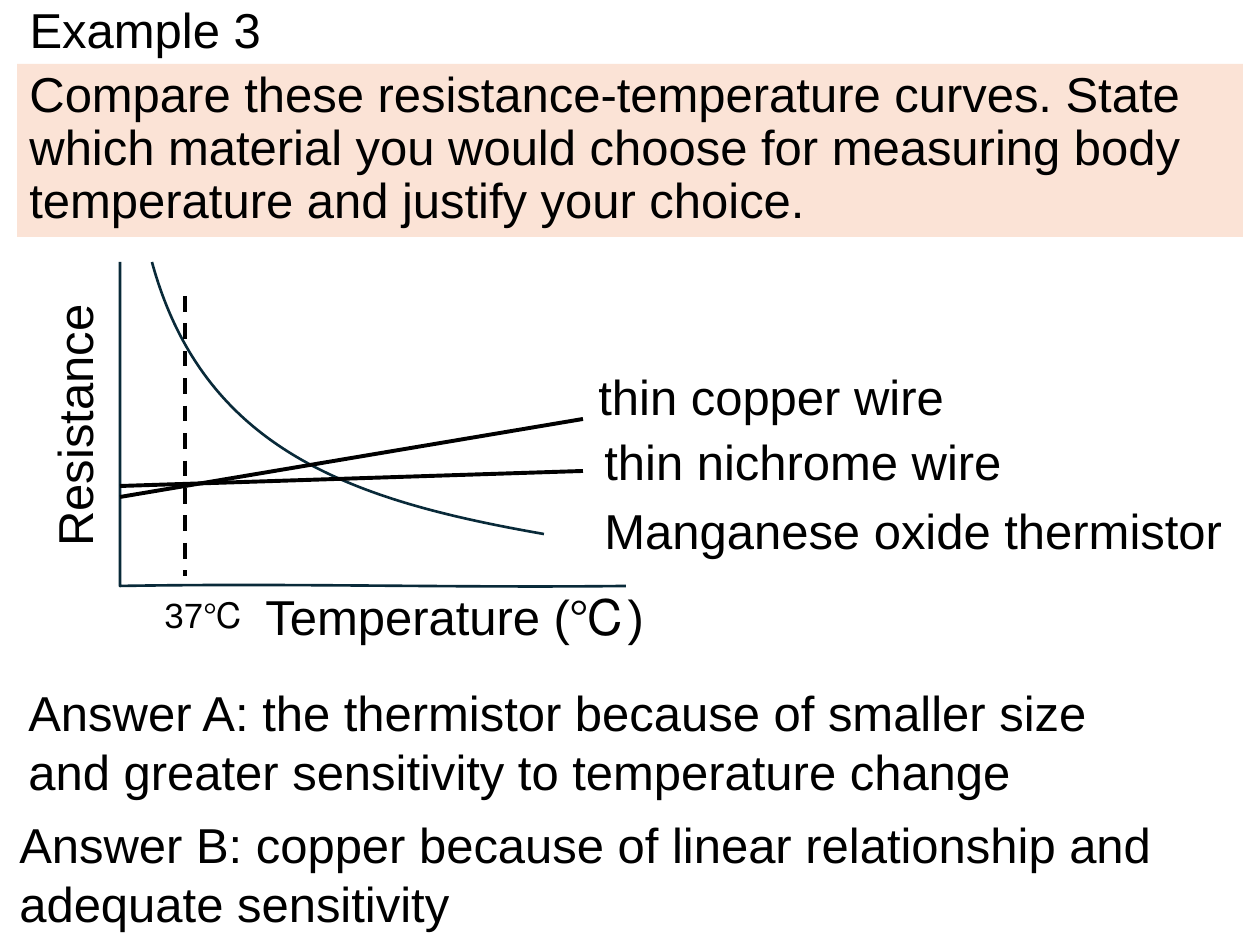
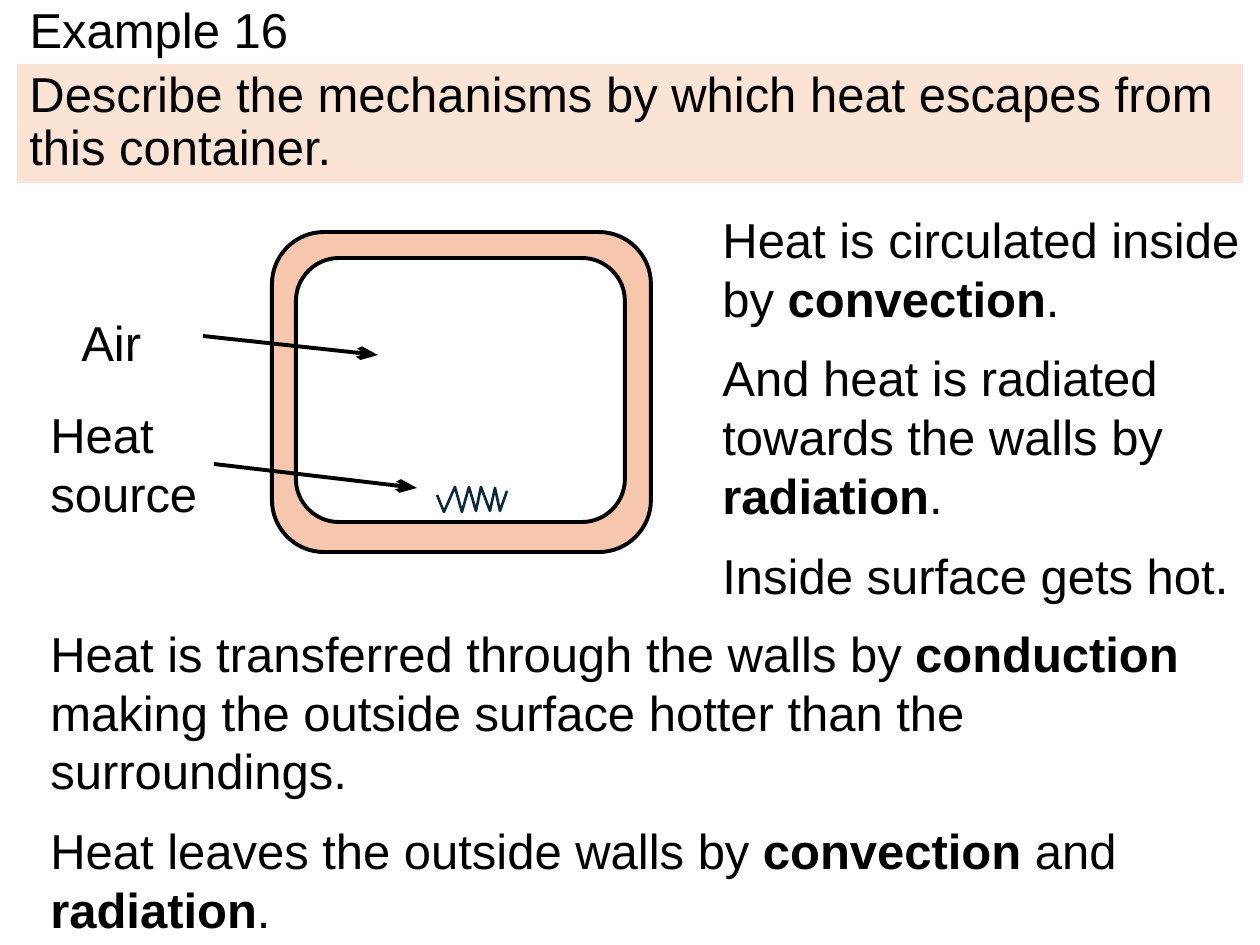
from lxml.etree import SubElement
from pptx import Presentation
from pptx.dml.color import RGBColor
from pptx.enum.dml import MSO_LINE
from pptx.enum.shapes import MSO_CONNECTOR, MSO_SHAPE
from pptx.enum.text import MSO_ANCHOR, MSO_AUTO_SIZE, PP_ALIGN
from pptx.oxml.ns import qn
from pptx.util import Emu, Pt

EMU_PER_PX = 914400 / 126
FONT = "Arial"
TEXT_SIZE = 28
THIN, THICK = 1.5, 2.25
ARC_RATIO = 0.55
COLORS = {
    "ink": "000000",
    "band": "FBE3D6",
    "wall": "F6C6AD",
    "sketch": "092A39",
}


def px(length):
    return Emu(round(length * EMU_PER_PX))


def color(name):
    return RGBColor.from_string(COLORS[name])


def write(text_frame, paragraphs, size=TEXT_SIZE, space_after=0, line_spacing=1.0):
    text_frame.text = "\n".join(paragraphs)
    for paragraph, marked in zip(text_frame.paragraphs, paragraphs):
        paragraph.alignment = PP_ALIGN.LEFT
        paragraph.space_before = Pt(0)
        paragraph.space_after = Pt(space_after)
        paragraph.line_spacing = line_spacing
        paragraph.clear()
        for index, part in enumerate(marked.split("*")):
            if not part:
                continue
            run = paragraph.add_run()
            run.text = part
            run.font.name = FONT
            run.font.size = Pt(size)
            run.font.bold = index % 2 == 1
            run.font.color.rgb = color("ink")


def add_example(presentation, title, question, band_height):
    slide = presentation.slides.add_slide(presentation.slide_layouts[5])
    heading = slide.shapes.title
    heading.left, heading.top = px(17), px(0)
    heading.width, heading.height = px(911), px(66)
    heading.text_frame.auto_size = MSO_AUTO_SIZE.NONE
    heading.text_frame.vertical_anchor = MSO_ANCHOR.MIDDLE
    write(heading.text_frame, [title], line_spacing=0.9)

    band = slide.shapes.add_shape(
        MSO_SHAPE.RECTANGLE, px(17), px(64), px(1226), px(band_height)
    )
    band.shadow.inherit = False
    band.fill.solid()
    band.fill.fore_color.rgb = color("band")
    band.line.fill.background()
    band.text_frame.word_wrap = True
    band.text_frame.auto_size = MSO_AUTO_SIZE.SHAPE_TO_FIT_TEXT
    band.text_frame.vertical_anchor = MSO_ANCHOR.TOP
    write(band.text_frame, [question], line_spacing=0.9)
    return slide


def add_text(slide, left, top, width, height, *paragraphs,
             wrap=True, space_after=12, size=TEXT_SIZE):
    box = slide.shapes.add_textbox(px(left), px(top), px(width), px(height))
    box.text_frame.word_wrap = wrap
    box.text_frame.auto_size = MSO_AUTO_SIZE.SHAPE_TO_FIT_TEXT
    write(box.text_frame, paragraphs, size, space_after)
    return box


def add_line(slide, start, end, dashed=False, arrow=False):
    connector = slide.shapes.add_connector(
        MSO_CONNECTOR.STRAIGHT, *map(px, start + end)
    )
    connector.line.color.rgb = color("ink")
    connector.line.width = Pt(THICK)
    if dashed:
        connector.line.dash_style = MSO_LINE.DASH
    if arrow:
        SubElement(connector.line._get_or_add_ln(), qn("a:tailEnd"),
                   type="arrow", w="med", len="lg")
    SubElement(connector._element.spPr, qn("a:effectLst"))


def bend_segments(shape, contours):
    line_elements = iter(list(shape._element.iter(qn("a:lnTo"))))
    for _, *segments in contours:
        for segment in segments:
            first, *others = [next(line_elements) for _ in segment]
            if others:
                first.tag = qn("a:cubicBezTo")
            for element in others:
                first.append(element[0])
                element.getparent().remove(element)


def add_outline(slide, contours, line="sketch", width=THIN, fill=None):
    builder = None
    for (start,), *segments in contours:
        position = tuple(map(px, start))
        if builder is None:
            builder = slide.shapes.build_freeform(*position)
        else:
            builder.move_to(*position)
        points = [tuple(map(px, point)) for segment in segments for point in segment]
        builder.add_line_segments(points, close=False)
        if fill:
            builder.add_line_segments([], close=True)
    shape = builder.convert_to_shape()
    bend_segments(shape, contours)
    shape.shadow.inherit = False
    shape.line.color.rgb = color(line)
    shape.line.width = Pt(width)
    if fill:
        shape.fill.solid()
        shape.fill.fore_color.rgb = color(fill)
    else:
        shape.fill.background()


def rounded_contour(left, top, right, bottom, radius):
    corners = (
        (right, top, -1, 0, 0, 1),
        (right, bottom, 0, -1, -1, 0),
        (left, bottom, 1, 0, 0, -1),
        (left, top, 0, 1, 1, 0),
    )
    near = radius * (1 - ARC_RATIO)
    contour = [[(left + radius, top)]]
    for x, y, in_x, in_y, out_x, out_y in corners:
        contour.append([(x + in_x * radius, y + in_y * radius)])
        contour.append([
            (x + in_x * near, y + in_y * near),
            (x + out_x * near, y + out_y * near),
            (x + out_x * radius, y + out_y * radius),
        ])
    del contour[-2:-1]
    contour.insert(-1, [(left, top + radius)])
    return contour


def build_resistance_slide(presentation):
    slide = add_example(
        presentation,
        "Example 3",
        "Compare these resistance-temperature curves. State which material you "
        "would choose for measuring body temperature and justify your choice.",
        173,
    )
    axes = [[(120, 262)], [(120, 586)], [(289, 583), (457, 588), (626, 586)]]
    add_outline(slide, [axes])
    resistance_label = add_text(slide, -83, 366, 314, 72, "Resistance", space_after=0)
    resistance_label.rotation = 270
    thermistor_curve = [[(152, 262)], [(204, 452), (355, 501), (544, 534)]]
    add_outline(slide, [thermistor_curve])
    add_text(slide, 253, 580, 437, 72, "Temperature (℃)", space_after=0)
    add_line(slide, (120, 497), (583, 419))
    add_line(slide, (120, 486), (583, 471))

    for left, top, width, material in (
        (586, 360, 375, "thin copper wire"),
        (592, 425, 428, "thin nichrome wire"),
        (592, 494, 651, "Manganese oxide thermistor"),
    ):
        add_text(slide, left, top, width, 72, material, wrap=False)

    add_text(slide, 16, 676, 1171, 131,
             "Answer A: the thermistor because of smaller size and greater "
             "sensitivity to temperature change")
    add_text(slide, 7, 808, 1171, 131,
             "Answer B: copper because of linear relationship and adequate sensitivity")
    add_text(slide, 152, 587, 116, 55, "37℃", space_after=0, size=20)
    add_line(slide, (185, 296), (185, 576), dashed=True)


def build_heat_slide(presentation):
    slide = add_example(
        presentation,
        "Example 16",
        "Describe the mechanisms by which heat escapes from this container.",
        119,
    )
    add_outline(
        slide,
        [rounded_contour(272, 232, 651, 552, 52),
         rounded_contour(296, 258, 625, 522, 43)],
        line="ink", width=THICK, fill="wall",
    )
    add_text(slide, 38, 398, 176, 131, "Heat source")
    heater = [(437, 495), (444, 512), (455, 487), (462, 512), (469, 487), (476, 511),
              (481, 487), (490, 511), (495, 488), (500, 511), (507, 491)]
    add_outline(slide, [[[point] for point in heater]])
    add_text(slide, 69, 306, 86, 72, "Air", wrap=False)
    add_line(slide, (203, 336), (378, 355), arrow=True)
    add_line(slide, (214, 464), (417, 488), arrow=True)
    add_text(slide, 710, 203, 549, 411,
             "Heat is circulated inside by *convection*.",
             "And heat is radiated towards the walls by *radiation*.",
             "Inside surface gets hot.")
    add_text(slide, 38, 617, 1173, 331,
             "Heat is transferred through the walls by *conduction* making the "
             "outside surface hotter than the surroundings.",
             "Heat leaves the outside walls by *convection* and *radiation*.")


def main():
    presentation = Presentation()
    presentation.slide_width, presentation.slide_height = px(1260), px(945)
    build_resistance_slide(presentation)
    build_heat_slide(presentation)
    presentation.save("out.pptx")


if __name__ == "__main__":
    main()
